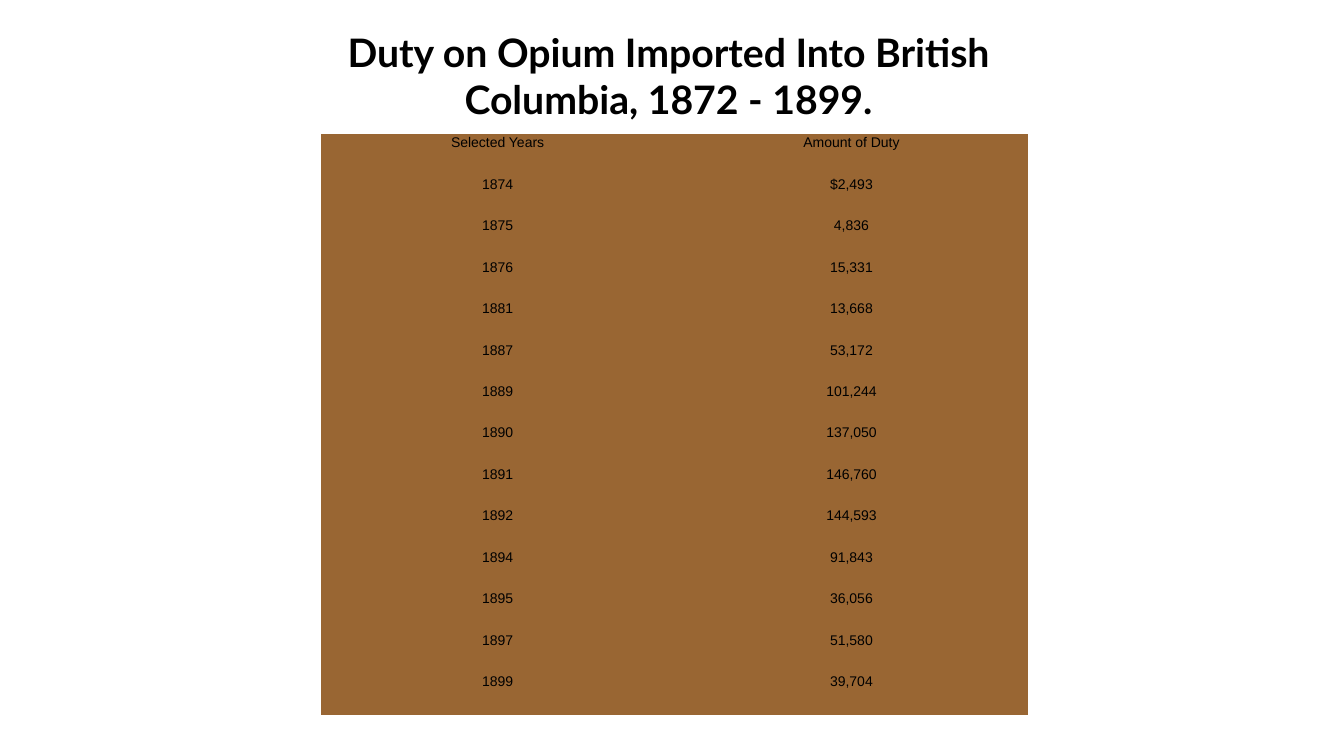
from pptx import Presentation
from pptx.dml.color import RGBColor
from pptx.enum.text import MSO_ANCHOR, PP_ALIGN
from pptx.oxml.ns import qn
from pptx.util import Inches, Pt

COLORS = {"text": "000000", "table": "996633"}
PLAIN_TABLE_STYLE = "{2D5ABB26-0587-4C30-8999-92F81FD0307C}"
DUTIES = [
    ("Selected Years", "Amount of Duty"),
    ("1874", "$2,493"),
    ("1875", "4,836"),
    ("1876", "15,331"),
    ("1881", "13,668"),
    ("1887", "53,172"),
    ("1889", "101,244"),
    ("1890", "137,050"),
    ("1891", "146,760"),
    ("1892", "144,593"),
    ("1894", "91,843"),
    ("1895", "36,056"),
    ("1897", "51,580"),
    ("1899", "39,704"),
]


class SlideBuilder:
    def __init__(self, presentation):
        self.slide = presentation.slides.add_slide(presentation.slide_layouts[5])

    def format_paragraph(self, paragraph, font_name, size, bold=False):
        paragraph.alignment = PP_ALIGN.CENTER
        paragraph.font.name = font_name
        paragraph.font.size = Pt(size)
        paragraph.font.bold = bold
        paragraph.font.color.rgb = RGBColor.from_string(COLORS["text"])

    def title(self, text, left, top, width, height):
        shape = self.slide.shapes.title
        shape.left, shape.top = Inches(left), Inches(top)
        shape.width, shape.height = Inches(width), Inches(height)
        shape.text_frame.text = text
        shape.text_frame.word_wrap = True
        shape.text_frame.vertical_anchor = MSO_ANCHOR.TOP
        self.format_paragraph(shape.text_frame.paragraphs[0], "Lato", 28, bold=True)

    def table(self, rows, left, top, width, height):
        frame = self.slide.shapes.add_table(
            len(rows), len(rows[0]),
            Inches(left), Inches(top), Inches(width), Inches(height),
        )
        table = frame.table
        table.first_row = table.horz_banding = False
        next(frame.element.iter(qn("a:tableStyleId"))).text = PLAIN_TABLE_STYLE
        for row_index, values in enumerate(rows):
            for column_index, value in enumerate(values):
                self.fill_cell(table.cell(row_index, column_index), value)

    def fill_cell(self, cell, value):
        cell.text = value
        cell.margin_left = cell.margin_right = Inches(0.01)
        cell.margin_top = cell.margin_bottom = Inches(0.01)
        cell.vertical_anchor = MSO_ANCHOR.TOP
        cell.fill.solid()
        cell.fill.fore_color.rgb = RGBColor.from_string(COLORS["table"])
        self.format_paragraph(cell.text_frame.paragraphs[0], "Arial", 10)


def main():
    presentation = Presentation()
    presentation.slide_width = Inches(13.33)
    presentation.slide_height = Inches(7.5)
    builder = SlideBuilder(presentation)
    builder.table(DUTIES, 3.18, 1.33, 7.02, 5.76)
    builder.title(
        "Duty on Opium Imported Into British Columbia, 1872 - 1899.",
        2.78, 0.23, 7.7, 1.95,
    )
    presentation.save("out.pptx")


if __name__ == "__main__":
    main()
